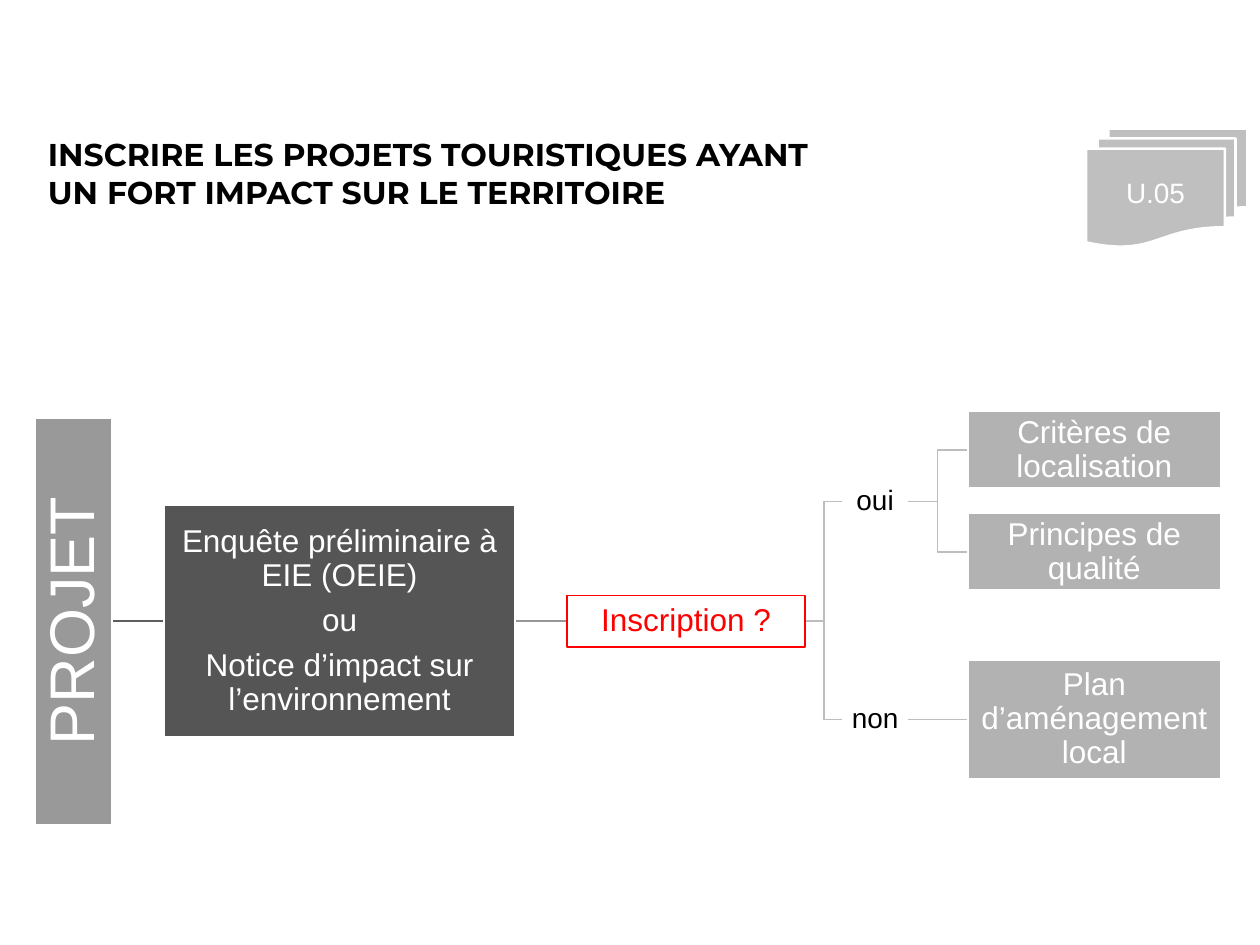
from lxml.etree import SubElement
from pptx import Presentation
from pptx.dml.color import RGBColor
from pptx.enum.shapes import MSO_CONNECTOR as Connector, MSO_SHAPE as Shape
from pptx.enum.text import MSO_ANCHOR as Anchor, MSO_AUTO_SIZE as AutoSize, PP_ALIGN as Align
from pptx.oxml.ns import qn
from pptx.util import Inches, Pt

# Content
TITLE = ["INSCRIRE LES PROJETS TOURISTIQUES AYANT", "UN FORT IMPACT SUR LE TERRITOIRE"]
REFERENCE = "U.05"
STUDY = ["Enquête préliminaire à EIE (OEIE)", "ou", "Notice d’impact sur l’environnement"]

# Columns: left, width
PROJECT, SURVEY, DECISION = (0.28, 0.61), (1.3, 2.79), (4.5, 1.89)
ANSWER, RESULT = (6.69, 0.51), (7.68, 2.01)

# Looks: fill, opacity in %, line, text colour, text size
PROJECT_LOOK = ("808080", 80, "FFFFFF", "FFFFFF", 36)
SURVEY_LOOK = ("0D0D0D", 70, "FFFFFF", "FFFFFF", 18)
DECISION_LOOK = ("FFFFFF", 100, "FF0000", "FF0000", 18)
ANSWER_LOOK = ("FFFFFF", 30, "FFFFFF", "000000", 16)
RESULT_LOOK = ("000000", 30, "FFFFFF", "FFFFFF", 18)

# Boxes: name, column, vertical centre, height, look, paragraphs
BOXES = [
    ("project", PROJECT, 4.93, 3.23, PROJECT_LOOK, ["PROJET"]),
    ("survey", SURVEY, 4.93, 1.84, SURVEY_LOOK, STUDY),
    ("decision", DECISION, 4.93, 0.41, DECISION_LOOK, ["Inscription ?"]),
    ("yes", ANSWER, 3.98, 0.61, ANSWER_LOOK, ["oui"]),
    ("location", RESULT, 3.57, 0.61, RESULT_LOOK, ["Critères de localisation"]),
    ("quality", RESULT, 4.38, 0.61, RESULT_LOOK, ["Principes de qualité"]),
    ("no", ANSWER, 5.71, 0.61, ANSWER_LOOK, ["non"]),
    ("plan", RESULT, 5.71, 0.94, RESULT_LOOK, ["Plan d’aménagement local"]),
]
LINKS = [
    ("project", "survey", Connector.STRAIGHT, "5E5E5E"),
    ("survey", "decision", Connector.STRAIGHT, "979797"),
    ("decision", "yes", Connector.ELBOW, "BDBDBD"),
    ("decision", "no", Connector.ELBOW, "BDBDBD"),
    ("yes", "location", Connector.ELBOW, "BDBDBD"),
    ("yes", "quality", Connector.ELBOW, "BDBDBD"),
    ("no", "plan", Connector.STRAIGHT, "BDBDBD"),
]


def paint(color_format, color):
    color_format.rgb = RGBColor.from_string(color)


def add_run(paragraph, text, size, color, font="Arial", bold=False):
    run = paragraph.add_run()
    run.text = text
    run.font.name, run.font.size, run.font.bold = font, Pt(size), bold
    paint(run.font.color, color)


def add_panel(slide, kind, place, fill, line, width, opacity=100):
    shape = slide.shapes.add_shape(kind, *map(Inches, place))
    shape.shadow.inherit = False
    shape.fill.solid()
    paint(shape.fill.fore_color, fill)
    if opacity < 100:
        color = shape.fill._xPr.find(qn("a:solidFill"))[0]
        SubElement(color, qn("a:alpha"), val=str(opacity * 1000))
    paint(shape.line.color, line)
    shape.line.width = Pt(width)
    shape.text_frame.word_wrap = True
    shape.text_frame.vertical_anchor = Anchor.MIDDLE
    return shape


def add_box(slide, column, centre, height, look, paragraphs):
    fill, opacity, line, color, size = look
    left, width = column
    place = (left, centre - height / 2, width, height)
    shape = add_panel(slide, Shape.RECTANGLE, place, fill, line, 1, opacity)
    frame = shape.text_frame
    frame.margin_left = frame.margin_right = Inches(0.01)
    frame.margin_top = frame.margin_bottom = Inches(0.01)
    for index, text in enumerate(paragraphs):
        paragraph = frame.add_paragraph() if index else frame.paragraphs[0]
        paragraph.alignment = Align.CENTER
        paragraph.line_spacing = 0.9
        paragraph.space_after = Pt(0.35 * size)
        add_run(paragraph, text, size, color)
    return shape


def add_link(slide, start, end, kind, color):
    connector = slide.shapes.add_connector(kind, 0, 0, 0, 0)
    connector.begin_connect(start, 3)
    connector.end_connect(end, 1)
    paint(connector.line.color, color)
    connector.line.width = Pt(1)
    SubElement(connector._element.spPr, qn("a:effectLst"))
    # Links lie behind the boxes
    slide.shapes._spTree.insert(2, connector._element)


def main():
    presentation = Presentation()
    presentation.slide_width, presentation.slide_height = Inches(10), Inches(7.5)
    slide = presentation.slides.add_slide(presentation.slide_layouts[5])

    # Title
    title = slide.shapes.title
    title.left, title.top, title.width, title.height = map(Inches, (0.28, 1.02, 9.29, 0.71))
    title.text_frame.auto_size = AutoSize.NONE
    title.text_frame.vertical_anchor = Anchor.TOP
    paragraph = title.text_frame.paragraphs[0]
    paragraph.alignment = Align.LEFT
    for index, line in enumerate(TITLE):
        if index:
            paragraph.add_line_break()
        add_run(paragraph, line, 18, "000000", "Montserrat", True)

    # Reference sheet
    sheet = add_panel(slide, Shape.FLOWCHART_MULTIDOCUMENT, (8.62, 1.02, 1.28, 0.94),
                      "BFBFBF", "FFFFFF", 1.5)
    sheet.text_frame.margin_top = 0
    paragraph = sheet.text_frame.paragraphs[0]
    paragraph.alignment = Align.CENTER
    add_run(paragraph, REFERENCE, 16, "FFFFFF")

    # Decision tree
    boxes = {name: add_box(slide, *details) for name, *details in BOXES}
    boxes["project"].text_frame._txBody.bodyPr.set("vert", "vert270")
    for start, end, kind, color in LINKS:
        add_link(slide, boxes[start], boxes[end], kind, color)

    presentation.save("out.pptx")


if __name__ == "__main__":
    main()
